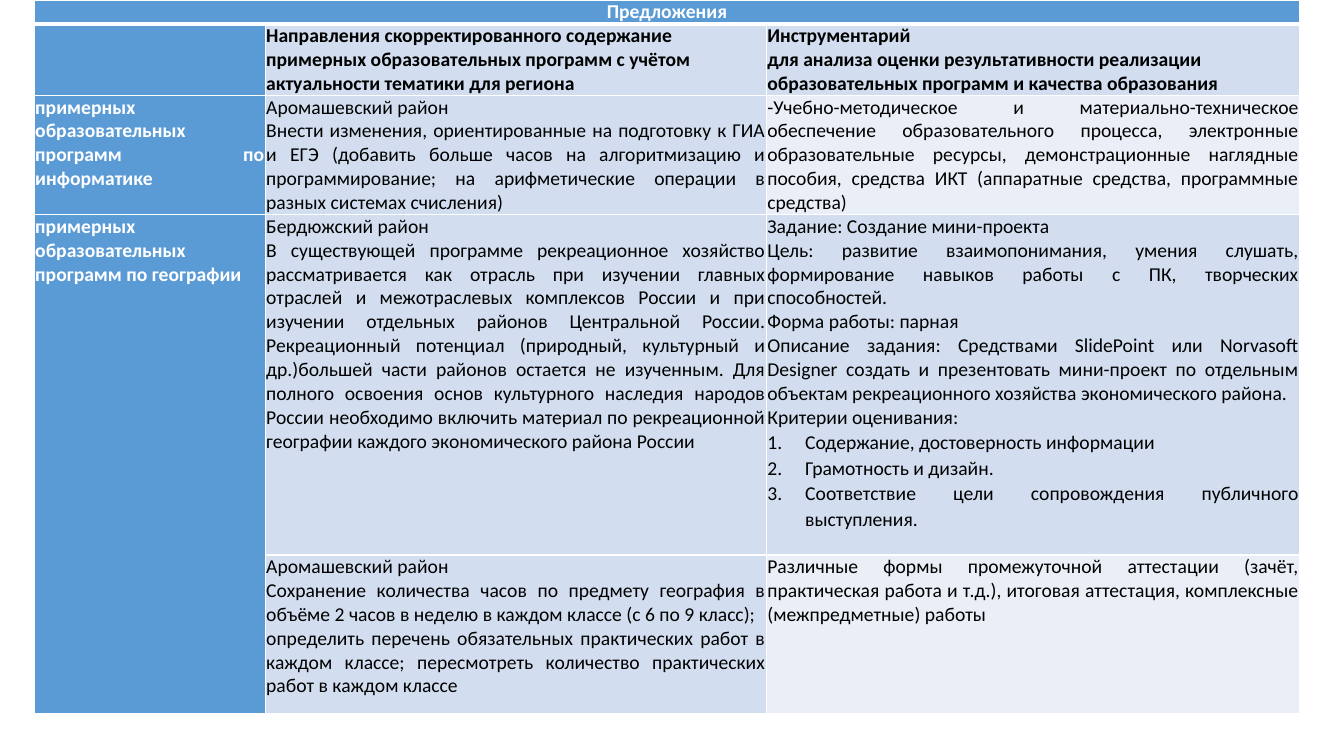
from lxml import etree
from pptx import Presentation
from pptx.dml.color import RGBColor
from pptx.enum.text import PP_ALIGN
from pptx.oxml.ns import qn
from pptx.util import Pt

LEFT, CENTER, JUSTIFY = PP_ALIGN.LEFT, PP_ALIGN.CENTER, PP_ALIGN.JUSTIFY

COLORS = {"accent": "5B9BD5", "band": "D2DEEF", "light": "EAEFF7",
          "white": "FFFFFF", "black": "000000"}
FONT, SIZE = "Calibri", 14
COLUMNS = [165, 358, 381]
ROWS = [17, 51, 85, 243, 113]

# Cell content: (row, column, fill, paragraphs, format)
HEAD = {"bold": True, "color": "white", "align": JUSTIFY}
SUBHEAD = {"bold": True, "align": LEFT}
BODY = {"align": JUSTIFY}
CELLS = [
    (0, 0, "accent", ["Предложения"], {**HEAD, "align": CENTER}),
    (1, 0, "accent", [], {}),
    (1, 1, "band", [
        "Направления скорректированного содержание примерных образовательных "
        "программ с учётом актуальности тематики для региона"], SUBHEAD),
    (1, 2, "band", [
        "Инструментарий",
        "для анализа оценки результативности реализации образовательных "
        "программ и качества образования"], SUBHEAD),
    (2, 0, "accent", ["примерных образовательных программ по информатике"], HEAD),
    (2, 1, "band", [
        "Аромашевский район",
        "Внести изменения, ориентированные на подготовку к ГИА и ЕГЭ (добавить "
        "больше часов на алгоритмизацию и программирование; на арифметические "
        "операции в разных системах счисления)"], BODY),
    (2, 2, "light", [
        "-Учебно-методическое и материально-техническое обеспечение "
        "образовательного процесса, электронные образовательные ресурсы, "
        "демонстрационные наглядные пособия, средства ИКТ (аппаратные средства, "
        "программные средства)"], BODY),
    (3, 0, "accent", ["примерных образовательных программ по географии"], HEAD),
    (3, 1, "band", [
        "Бердюжский район",
        "В существующей программе рекреационное хозяйство рассматривается как "
        "отрасль при изучении главных отраслей и межотраслевых комплексов России "
        "и при изучении отдельных районов Центральной России. Рекреационный "
        "потенциал (природный, культурный и др.)большей части районов остается "
        "не изученным. Для полного освоения основ культурного наследия народов "
        "России необходимо включить материал по рекреационной географии каждого "
        "экономического района России"], BODY),
    (3, 2, "band", [
        "Задание: Создание мини-проекта",
        "Цель: развитие взаимопонимания, умения слушать, формирование навыков "
        "работы с ПК, творческих способностей.",
        "Форма работы: парная",
        "Описание задания: Средствами SlidePoint или Norvasoft Designer создать "
        "и презентовать мини-проект по отдельным объектам рекреационного "
        "хозяйства экономического района.",
        "Критерии оценивания:"], BODY),
    (4, 1, "band", [
        "Аромашевский район",
        "Сохранение количества часов по предмету география в объёме 2 часов "
        "в неделю в каждом классе (с 6 по 9 класс);",
        "определить перечень обязательных практических работ в каждом классе; "
        "пересмотреть количество практических работ в каждом классе"], BODY),
    (4, 2, "light", [
        "Различные формы промежуточной аттестации (зачёт, практическая работа "
        "и т.д.), итоговая аттестация, комплексные (межпредметные) работы"], BODY),
]
CRITERIA = ["Содержание, достоверность информации", "Грамотность и дизайн.",
            "Соответствие цели сопровождения публичного выступления."]


def rgb(name):
    return RGBColor.from_string(COLORS[name])


def write(p, text, bold=False, color="black", align=LEFT, numbered=False):
    p.alignment = align
    r = p.add_run()
    r.text = text
    r.font.name, r.font.size, r.font.bold = FONT, Pt(SIZE), bold
    r.font.color.rgb = rgb(color)
    if numbered:
        p.line_spacing = 1.07
        pPr = p._p.get_or_add_pPr()
        pPr.set("marL", str(Pt(27)))
        pPr.set("indent", str(-Pt(27)))
        etree.SubElement(pPr, qn("a:buFont"), typeface="+mj-lt")
        etree.SubElement(pPr, qn("a:buAutoNum"), type="arabicPeriod")


class Deck:
    def __init__(self, prs):
        self.prs = prs
        self.s = prs.slides.add_slide(prs.slide_layouts[6])

    def table(self, left, top, columns, rows):
        frame = self.s.shapes.add_table(len(rows), len(columns), Pt(left), Pt(top),
                                        Pt(sum(columns)), Pt(sum(rows)))
        table = frame.table
        for column, width in zip(table.columns, columns):
            column.width = Pt(width)
        for row, height in zip(table.rows, rows):
            row.height = Pt(height)
        return table

    def borders(self, cell, bottom=1):
        tcPr = cell._tc.get_or_add_tcPr()
        widths = {"lnL": 1, "lnR": 1, "lnT": 1, "lnB": bottom}
        for i, (side, width) in enumerate(widths.items()):
            ln = etree.Element(qn(f"a:{side}"), w=str(Pt(width)))
            fill = etree.SubElement(ln, qn("a:solidFill"))
            etree.SubElement(fill, qn("a:srgbClr"), val=COLORS["white"])
            tcPr.insert(i, ln)

    def cell(self, cell, fill, paragraphs, **style):
        cell.margin_left = cell.margin_right = Pt(0.7)
        cell.margin_top = cell.margin_bottom = 0
        cell.fill.solid()
        cell.fill.fore_color.rgb = rgb(fill)
        tf = cell.text_frame
        for i, text in enumerate(paragraphs):
            write(tf.paragraphs[0] if i == 0 else tf.add_paragraph(), text, **style)


def main():
    prs = Presentation()
    prs.slide_width, prs.slide_height = Pt(960), Pt(540)
    deck = Deck(prs)

    # Table grid with merged heading and merged geography label
    table = deck.table(24.5, 0, COLUMNS, ROWS)
    table.cell(0, 0).merge(table.cell(0, 2))
    table.cell(3, 0).merge(table.cell(4, 0))

    # Cell text and fills
    for row, col, fill, paragraphs, style in CELLS:
        deck.cell(table.cell(row, col), fill, paragraphs, **style)

    # Numbered grading criteria
    for text in CRITERIA:
        p = table.cell(3, 2).text_frame.add_paragraph()
        write(p, text, align=JUSTIFY, numbered=True)

    # White grid lines, thicker under the heading
    for row in range(len(ROWS)):
        for col in range(len(COLUMNS)):
            deck.borders(table.cell(row, col), bottom=3 if row == 0 else 1)

    prs.save("out.pptx")


if __name__ == "__main__":
    main()
